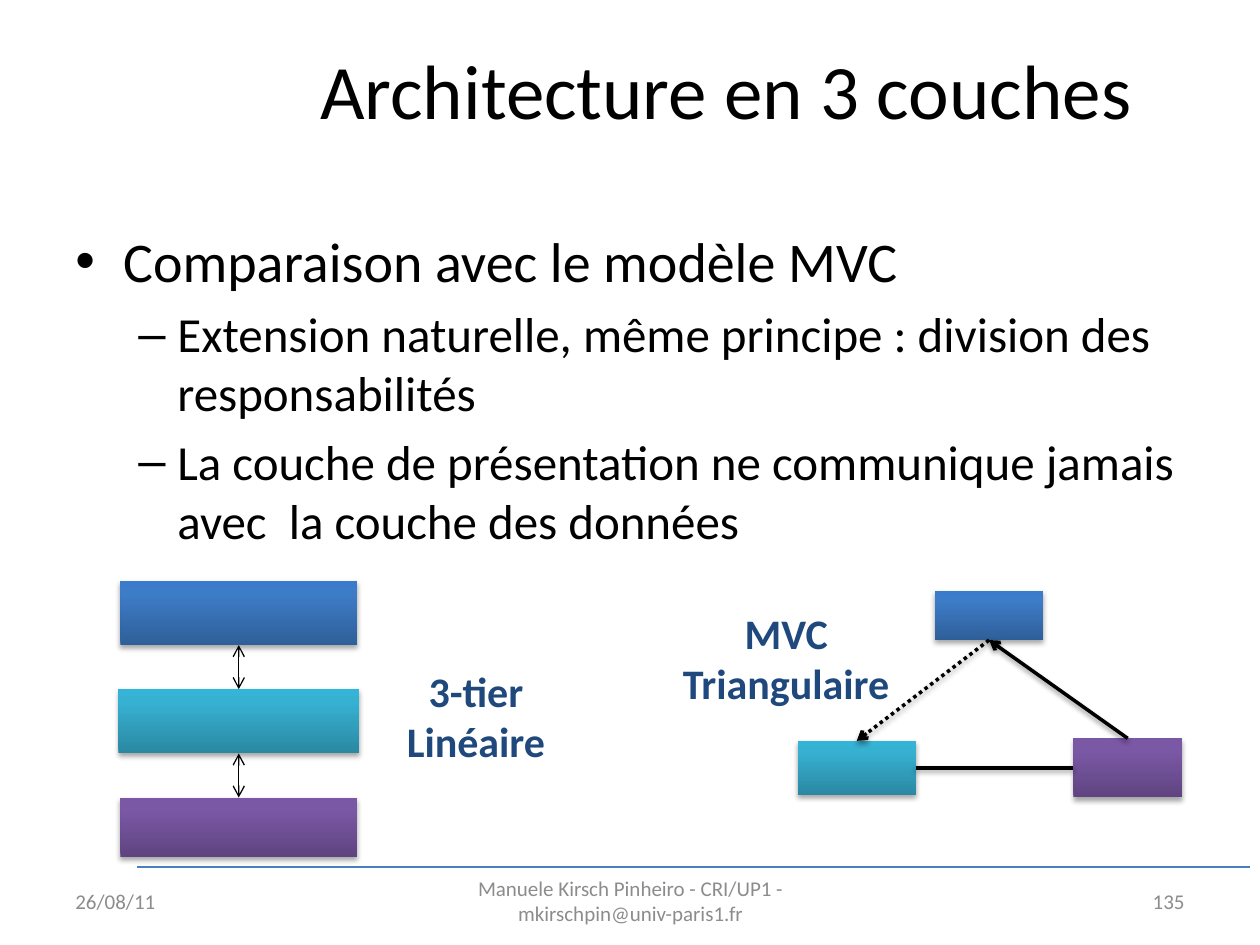
from copy import deepcopy
from dataclasses import dataclass

from lxml import etree
from pptx import Presentation
from pptx.dml.color import RGBColor
from pptx.enum.dml import MSO_LINE
from pptx.enum.shapes import MSO_CONNECTOR, MSO_SHAPE
from pptx.enum.text import MSO_ANCHOR as ANCHOR, PP_ALIGN as ALIGN
from pptx.oxml.ns import qn
from pptx.util import Inches, Pt

TOP, LEFT, BOTTOM, RIGHT = range(4)


@dataclass(frozen=True)
class Theme:
    """Colours, font and type sizes of the slide."""
    font: str = "Calibri"
    text: str = "000000"
    label: str = "1F497D"
    footer: str = "8C8C8C"
    rule: str = "4B7EBC"
    blue: tuple = ("2F5F99", "3D7CC7", "3A7CCB")
    teal: tuple = ("2A88A2", "37B1D2", "34B4D6")
    purple: tuple = ("5F4480", "7B58A6", "7C57A8")
    title_size: int = 44
    body_size: int = 32
    detail_size: int = 28
    label_size: int = 24
    footer_size: int = 12


@dataclass(frozen=True)
class Box:
    """A rectangle in inches."""
    left: float
    top: float
    width: float
    height: float

    def inner(self, left, top, width, height):
        """Return a box placed relative to this one."""
        return Box(self.left + left, self.top + top, width, height)

    def lengths(self):
        """Return the four measures as slide lengths."""
        return [Inches(value) for value in (self.left, self.top, self.width, self.height)]


THEME = Theme()


def add_text(slide, box, lines, size, color, align=ALIGN.LEFT, anchor=ANCHOR.TOP, bold=False, wrap=True):
    """Add a text box with one paragraph per line and return its paragraphs."""
    frame = slide.shapes.add_textbox(*box.lengths()).text_frame
    frame.word_wrap = wrap
    frame.vertical_anchor = anchor
    frame.text = "\n".join(lines)
    for paragraph in frame.paragraphs:
        paragraph.alignment = align
        for run in paragraph.runs:
            run.font.name = THEME.font
            run.font.size = Pt(size)
            run.font.bold = bold
            run.font.color.rgb = RGBColor.from_string(color)
    return frame.paragraphs


def add_shadow(effects, opacity, distance):
    """Put a soft downward shadow into an effect list."""
    shadow = etree.SubElement(effects, qn("a:outerShdw"), blurRad=str(Pt(3.1)),
                              dist=str(Pt(distance)), dir="5400000", rotWithShape="0")
    color = etree.SubElement(shadow, qn("a:srgbClr"), val=THEME.text)
    etree.SubElement(color, qn("a:alpha"), val=str(opacity * 1000))


def add_block(slide, box, colors):
    """Add a shaded rectangle with a vertical gradient."""
    shape = slide.shapes.add_shape(MSO_SHAPE.RECTANGLE, *box.lengths())
    shape.line.fill.background()
    shape.fill.gradient()
    shape.fill.gradient_angle = 90
    stop_list = shape._element.spPr.find(qn("a:gradFill")).find(qn("a:gsLst"))
    stop_list.append(deepcopy(stop_list[-1]))
    for stop, color, position in zip(shape.fill.gradient_stops, colors, (0, 0.8, 1)):
        stop.color.rgb = RGBColor.from_string(color)
        stop.position = position
    shape.shadow.inherit = False
    add_shadow(shape._element.spPr.find(qn("a:effectLst")), 35, 1.8)
    return shape


def add_line(slide, start, end, color, width, ends=(), dash=None, shadow=False):
    """Add a straight line between two points in inches."""
    line = slide.shapes.add_connector(MSO_CONNECTOR.STRAIGHT, *map(Inches, (*start, *end)))
    line.line.color.rgb = RGBColor.from_string(color)
    line.line.width = Pt(width)
    if dash:
        line.line.dash_style = dash
    for name in ends:
        etree.SubElement(line.line._get_or_add_ln(), qn(name), type="arrow")
    effects = etree.SubElement(line._element.spPr, qn("a:effectLst"))
    if shadow:
        add_shadow(effects, 38, 1.6)
    return line


def link(slide, source, source_site, target, target_site, width, **style):
    """Join the connection sites of two blocks."""
    line = add_line(slide, (0, 0), (1, 1), THEME.text, width, **style)
    line.begin_connect(source, source_site)
    line.end_connect(target, target_site)


def add_title(slide, box):
    """Place the slide title."""
    add_text(slide, box, ["Architecture en 3 couches"], THEME.title_size, THEME.text,
             ALIGN.CENTER, ANCHOR.MIDDLE)


def add_body(slide, box):
    """Place the bulleted comparison."""
    lines = ["Comparaison avec le modèle MVC",
             "Extension naturelle, même principe : division des responsabilités",
             "La couche de présentation ne communique jamais avec  la couche des données"]
    paragraphs = add_text(slide, box, lines, THEME.body_size, THEME.text)
    for index, paragraph in enumerate(paragraphs):
        level = min(index, 1)
        margin, indent, mark = ((0.38, -0.38, "•"), (0.81, -0.31, "–"))[level]
        properties = paragraph._p.get_or_add_pPr()
        properties.set("marL", str(Inches(margin)))
        properties.set("indent", str(Inches(indent)))
        etree.SubElement(properties, qn("a:buFont"), typeface="Arial")
        etree.SubElement(properties, qn("a:buChar"), char=mark)
        paragraph.level = level
        if level:
            paragraph.space_before = Pt(THEME.detail_size * 0.2)
            paragraph.runs[0].font.size = Pt(THEME.detail_size)


def add_tiers(slide, box):
    """Stack the three linked layers and their label."""
    pitch = 0.86
    layers = ((1.88, 0.51, THEME.blue), (1.91, 0.51, THEME.teal), (1.88, 0.47, THEME.purple))
    blocks = [add_block(slide, box.inner((box.width - width) / 2, row * pitch, width, height), colors)
              for row, (width, height, colors) in enumerate(layers)]
    for upper, lower in zip(blocks, blocks[1:]):
        link(slide, upper, BOTTOM, lower, TOP, 0.75, ends=("a:headEnd", "a:tailEnd"))
    add_text(slide, box.inner(2.18, 0.62, 1.39, 0.91), ["3-tier ", "Linéaire "],
             THEME.label_size, THEME.label, ALIGN.CENTER, bold=True, wrap=False)


def add_triangle(slide, box):
    """Place the MVC triangle and its label."""
    top = add_block(slide, box.inner(1.09, 0, 0.86, 0.39), THEME.blue)
    left = add_block(slide, box.inner(0, 1.19, 0.94, 0.43), THEME.teal)
    right = add_block(slide, box.inner(2.19, 1.17, 0.86, 0.47), THEME.purple)
    add_text(slide, box.inner(-1.02, 0.08, 1.86, 0.91), ["MVC", "Triangulaire"],
             THEME.label_size, THEME.label, ALIGN.CENTER, bold=True, wrap=False)
    link(slide, left, RIGHT, right, LEFT, 2, shadow=True)
    link(slide, right, TOP, top, BOTTOM, 2, ends=("a:tailEnd",), shadow=True)
    link(slide, top, BOTTOM, left, TOP, 2, ends=("a:tailEnd",), dash=MSO_LINE.ROUND_DOT, shadow=True)


def add_footer(slide, box):
    """Place the rule, date, author and page number."""
    add_line(slide, (box.left + 0.59, box.top - 0.07), (box.left + 9.42, box.top - 0.07), THEME.rule, 0.75)
    parts = ((0, 2.33, "26/08/11", ALIGN.LEFT),
             (2.92, 3.17, "Manuele Kirsch Pinheiro - CRI/UP1 - mkirschpin@univ-paris1.fr", ALIGN.CENTER),
             (6.67, 2.33, "135", ALIGN.RIGHT))
    for left, width, text, align in parts:
        add_text(slide, box.inner(left, 0, width, box.height), [text],
                 THEME.footer_size, THEME.footer, align, ANCHOR.MIDDLE)


def main():
    """Build and save the presentation."""
    presentation = Presentation()
    presentation.slide_width, presentation.slide_height = Inches(10), Inches(7.5)
    slide = presentation.slides.add_slide(presentation.slide_layouts[6])
    add_title(slide, Box(1.72, 0.08, 8.09, 1.25))
    add_body(slide, Box(0.5, 1.75, 9, 4.95))
    add_tiers(slide, Box(0.94, 4.61, 1.91, 2.19))
    add_triangle(slide, Box(6.33, 4.69, 3.05, 1.64))
    add_footer(slide, Box(0.5, 6.95, 9, 0.4))
    presentation.save("out.pptx")


if __name__ == "__main__":
    main()
